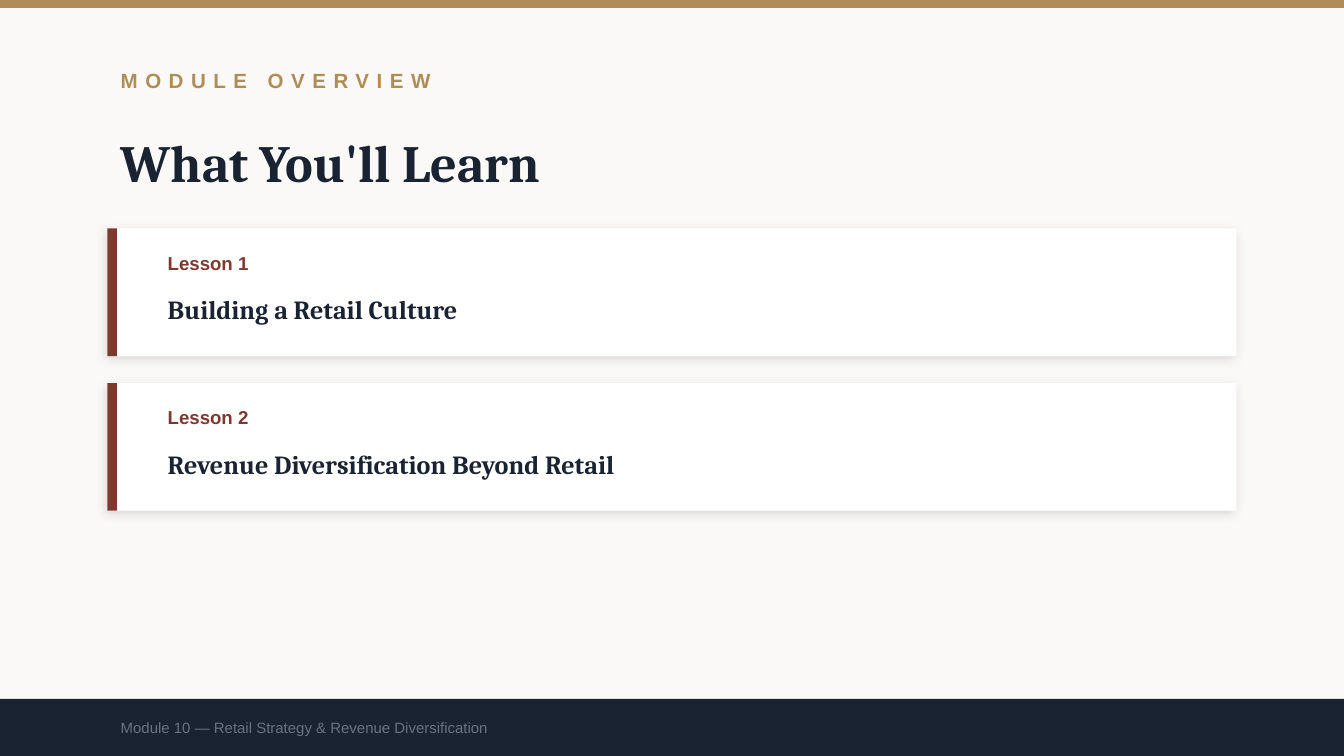
import pptx
import pptx.dml.color
import pptx.enum.shapes
import pptx.enum.text
import pptx.oxml
import pptx.oxml.ns
import pptx.util

Pt = pptx.util.Pt
GOLD, NAVY, RUST = "B08D57", "1A2332", "7C3A2E"
CREAM, WHITE, GREY = "FAF9F7", "FFFFFF", "6B7280"
SANS, SERIF = "Arial", "Cambria"
LEFT = 57.6
CARD_TOP, CARD_HEIGHT, CARD_PITCH = 122.4, 68.4, 82.8
LESSONS = ["Building a Retail Culture", "Revenue Diversification Beyond Retail"]


def color(value):
    return pptx.dml.color.RGBColor.from_string(value)


def add_block(slide, left, top, width, height, fill):
    block = slide.shapes.add_shape(
        pptx.enum.shapes.MSO_SHAPE.RECTANGLE, Pt(left), Pt(top), Pt(width), Pt(height))
    block.shadow.inherit = False
    block.fill.solid()
    block.fill.fore_color.rgb = color(fill)
    block.line.fill.background()
    return block


def add_soft_shadow(block):
    effects = block._element.spPr.find(pptx.oxml.ns.qn("a:effectLst"))
    effects.append(pptx.oxml.parse_xml(
        f'<a:outerShdw {pptx.oxml.ns.nsdecls("a")} blurRad="{Pt(6)}" dist="{Pt(2)}" '
        'dir="8100000" algn="bl" rotWithShape="0">'
        '<a:srgbClr val="000000"><a:alpha val="12000"/></a:srgbClr></a:outerShdw>'))


def add_label(slide, text, left, top, width, height, font, size, fill, bold=True, spacing=0):
    frame = slide.shapes.add_textbox(Pt(left), Pt(top), Pt(width), Pt(height)).text_frame
    frame.word_wrap = True
    frame.vertical_anchor = pptx.enum.text.MSO_ANCHOR.MIDDLE
    line = frame.paragraphs[0]
    line.text = text
    line.font.name = font
    line.font.size = Pt(size)
    line.font.bold = bold
    line.font.color.rgb = color(fill)
    if spacing:
        line.runs[0]._r.get_or_add_rPr().set("spc", str(spacing * 100))


def add_lesson(slide, number, title):
    top = CARD_TOP + (number - 1) * CARD_PITCH
    card = add_block(slide, LEFT, top, 604.8, CARD_HEIGHT, WHITE)
    add_soft_shadow(card)
    add_block(slide, LEFT, top, 5.04, CARD_HEIGHT, RUST)
    text_left = LEFT + 25.2
    add_label(slide, f"Lesson {number}", text_left, top + 5.76, 504, 25.2, SANS, 10, RUST)
    add_label(slide, title, text_left, top + 28.8, 561.6, 28.8, SERIF, 14, NAVY)


def main():
    deck = pptx.Presentation()
    deck.slide_width, deck.slide_height = Pt(720), Pt(405)
    slide = deck.slides.add_slide(deck.slide_layouts[6])
    slide.background.fill.solid()
    slide.background.fill.fore_color.rgb = color(CREAM)

    add_block(slide, 0, 0, 720, 4.32, GOLD)
    add_label(slide, "MODULE OVERVIEW", LEFT, 28.8, 576, 28.8, SANS, 11, GOLD, spacing=4)
    add_label(slide, "What You'll Learn", LEFT, 64.8, 576, 43.2, SERIF, 28, NAVY)
    for number, title in enumerate(LESSONS, 1):
        add_lesson(slide, number, title)
    add_block(slide, 0, 374.4, 720, 30.6, NAVY)
    add_label(slide, "Module 10 — Retail Strategy & Revenue Diversification",
              LEFT, 374.4, 576, 30.6, SANS, 8, GREY, bold=False)

    deck.save("out.pptx")


if __name__ == "__main__":
    main()
